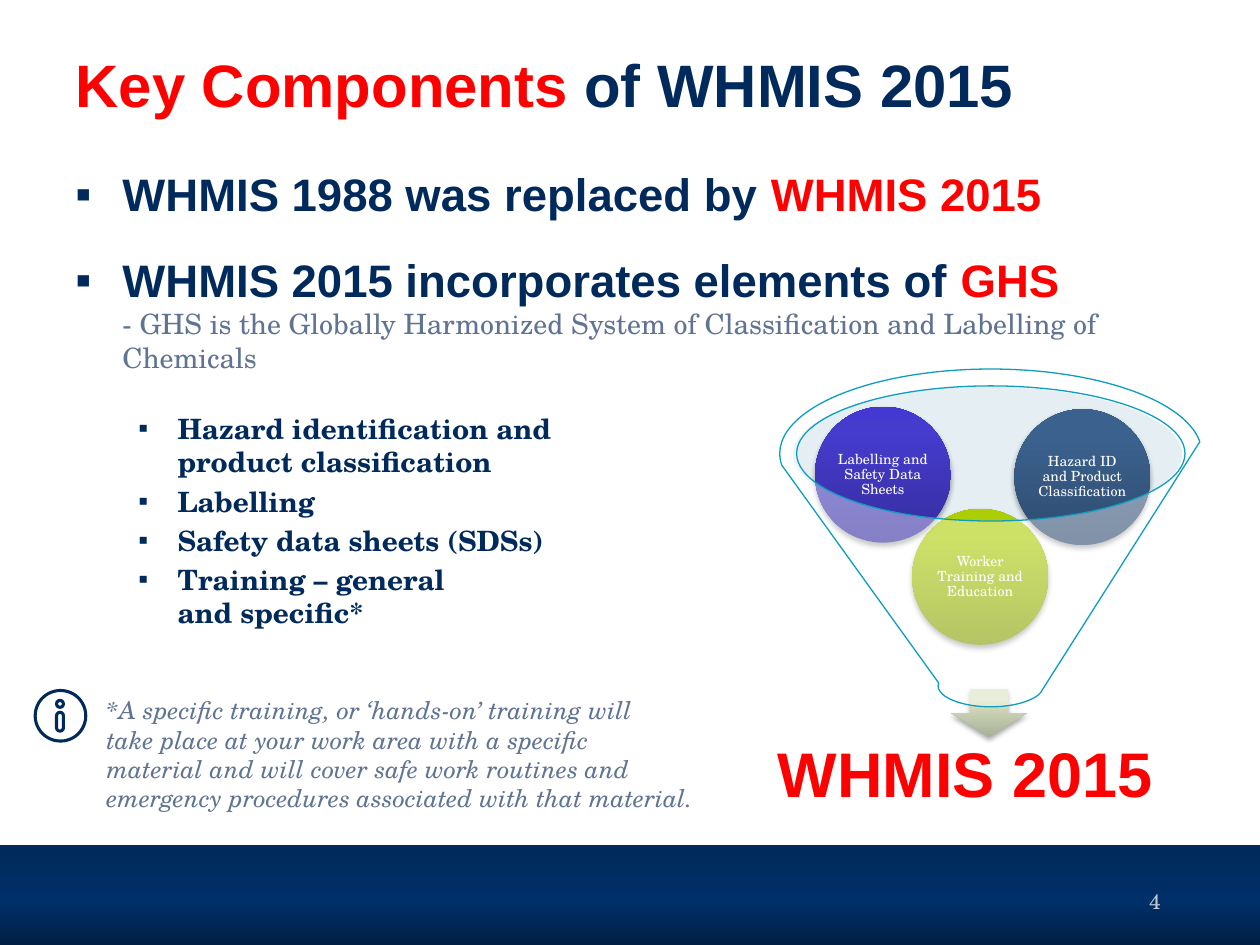
from lxml import etree
from pptx import Presentation
from pptx.dml.color import RGBColor
from pptx.enum import shapes, text
from pptx.oxml.ns import qn
from pptx.util import Cm, Pt

COLORS = {"navy": "002A5C", "red": "FF0000", "slate": "607392", "white": "FFFFFF",
          "pale": "BDD5E2", "teal": "0D9DBF", "page": "C0C9D5"}
SANS, SERIF = "Arial", "TeX Gyre Schola"
TITLE = [("Key Components ", "red"), ("of WHMIS 2015", "navy")]
POINTS = [
    [("WHMIS 1988 was replaced by ", "navy"), ("WHMIS 2015", "red")],
    [("WHMIS 2015 incorporates elements of ", "navy"), ("GHS", "red")],
]
GHS_NOTE = "- GHS is the Globally Harmonized System of Classification and Labelling of Chemicals"
ELEMENTS = ["Hazard identification and\vproduct classification", "Labelling",
            "Safety data sheets (SDSs)", "Training – general\vand specific*"]
FOOTNOTE = ["*A specific training, or ‘hands-on’ training will",
            "take place at your work area with a specific",
            "material and will cover safe work routines and",
            "emergency procedures associated with that material."]
BAND = [(0, "002A5C"), (39, "002E64"), (55, "003069"), (73, "002A5C"), (100, "001E42")]
ARROW = [(0, "A8B096"), (80, "DBE4C2"), (100, "DCE6C3")]
BALL = 2.74
BALLS = [
    (18.39, 10.26, "Worker Training and Education", [(0, "859E01"), (80, "ADCE02"), (100, "AFD000")]),
    (16.43, 8.2, "Labelling and Safety Data Sheets", [(0, "352D9E"), (80, "453BCD"), (100, "4338D1")]),
    (20.45, 8.25, "Hazard ID and Product Classification", [(0, "2E4B6E"), (80, "3B618E"), (100, "3A6191")]),
]
ICON = [("OVAL", 0.71, 13.92, 1.02, 1.02), ("OVAL", 1.14, 14.12, 0.14, 0.14),
        ("ROUNDED_RECTANGLE", 1.14, 14.36, 0.14, 0.38)]

prs = Presentation()
prs.slide_width, prs.slide_height = Cm(25.4), Cm(19.05)
s = prs.slides.add_slide(prs.slide_layouts[5])


def rgb(name):
    return RGBColor.from_string(COLORS[name])


def style(font, size, name, color, bold=False, italic=False):
    font.size, font.name, font.bold, font.italic = Pt(size), name, bold, italic
    font.color.rgb = rgb(color)


def add_runs(p, runs):
    for words, color in runs:
        r = p.add_run()
        r.text = words
        r.font.color.rgb = rgb(color)


def sub(parent, tag, **attrs):
    return etree.SubElement(parent, qn(tag), {k: str(v) for k, v in attrs.items()})


def add_shape(kind, *box):
    sp = s.shapes.add_shape(getattr(shapes.MSO_SHAPE, kind), *map(Cm, box))
    sp.shadow.inherit = False
    sp.fill.background()
    sp.line.fill.background()
    return sp


def gradient(sp, stops, angle):
    sp.fill.gradient()
    sp.fill.gradient_angle = angle
    gs_list = sp._element.spPr.find(".//" + qn("a:gsLst"))
    for gs in list(gs_list):
        gs_list.remove(gs)
    for pos, color in stops:
        sub(sub(gs_list, "a:gs", pos=pos * 1000), "a:srgbClr", val=color)


def tint(sp, color):
    sp.fill.solid()
    sp.fill.fore_color.rgb = rgb(color)
    sub(sp._element.spPr.find(qn("a:solidFill"))[0], "a:alpha", val=40000)


def drop_shadow(sp):
    effects = sp._element.spPr.find(qn("a:effectLst"))
    shadow = sub(effects, "a:outerShdw", blurRad=Pt(3.1), dist=Pt(1.8), dir=5400000, rotWithShape=0)
    sub(sub(shadow, "a:srgbClr", val="000000"), "a:alpha", val=35000)


def add_text(*box, anchor="TOP", wrap=True):
    tf = s.shapes.add_textbox(*map(Cm, box)).text_frame
    tf.word_wrap = wrap
    tf.vertical_anchor = getattr(text.MSO_ANCHOR, anchor)
    return tf


def set_margins(tf, size):
    tf.margin_left = tf.margin_right = tf.margin_top = tf.margin_bottom = Cm(size)


def add_paragraph(tf):
    return tf.add_paragraph() if tf.paragraphs[0].text else tf.paragraphs[0]


def bullet(p, left, hang):
    pPr = p._p.get_or_add_pPr()
    pPr.set("marL", str(Cm(left)))
    pPr.set("indent", str(-Cm(hang)))
    sub(pPr, "a:buFont", typeface="Arial")
    sub(pPr, "a:buChar", char="▪")


gradient(add_shape("RECTANGLE", 0, 17.04, 25.4, 2.01), BAND, 270)

title = s.shapes.title
title.left, title.top, title.width, title.height = map(Cm, (1.27, 0.76, 22.86, 1.85))
tf = title.text_frame
tf.word_wrap = True
tf.vertical_anchor = text.MSO_ANCHOR.MIDDLE
p = tf.paragraphs[0]
p.alignment = text.PP_ALIGN.LEFT
style(p.font, 34.2, SANS, "navy", bold=True)
add_runs(p, TITLE)

tf = add_text(1.27, 3.23, 22.91, 11.76)
for runs in POINTS:
    p = add_paragraph(tf)
    bullet(p, 0.95, 0.95)
    p.space_after = Pt(18)
    style(p.font, 26, SANS, "navy", bold=True)
    add_runs(p, runs)
p.add_line_break()
r = p.add_run()
r.text = GHS_NOTE
style(r.font, 16, SERIF, "slate")
for item in ELEMENTS:
    p = add_paragraph(tf)
    p.text = item
    p.level = 1
    bullet(p, 2.06, 0.79)
    p.space_before = Pt(3.2)
    style(p.font, 16, SERIF, "navy", bold=True)

tint(add_shape("OVAL", 15.98, 7.8, 7.85, 2.72), "pale")
arrow = add_shape("DOWN_ARROW", 19.18, 13.89, 1.52, 0.97)
gradient(arrow, ARROW, 90)
drop_shadow(arrow)

tf = add_text(12.73, 14.3, 13.46, 2.74, anchor="MIDDLE")
set_margins(tf, 0.71)
p = tf.paragraphs[0]
p.text = "WHMIS 2015"
p.alignment, p.line_spacing = text.PP_ALIGN.CENTER, 0.9
style(p.font, 36, SANS, "red", bold=True)

for left, top, label, stops in BALLS:
    ball = add_shape("OVAL", left, top, BALL, BALL)
    gradient(ball, stops, 90)
    drop_shadow(ball)
    tf = ball.text_frame
    tf.word_wrap = True
    set_margins(tf, 0.03)
    p = tf.paragraphs[0]
    p.text = label
    p.alignment, p.line_spacing = text.PP_ALIGN.CENTER, 0.9
    style(p.font, 8, SERIF, "white")

funnel = add_shape("FUNNEL", 15.72, 7.44, 8.51, 6.81)
tint(funnel, "white")
funnel.line.color.rgb = rgb("teal")
funnel.line.width = Pt(0.75)

tf = add_text(17.93, 17.65, 5.72, 1.02, anchor="MIDDLE")
p = tf.paragraphs[0]
p.text = "4"
p.alignment = text.PP_ALIGN.RIGHT
style(p.font, 12, SERIF, "page")

for kind, *box in ICON:
    part = add_shape(kind, *box)
    part.line.color.rgb = rgb("navy")
    part.line.width = Pt(1.75)
    if kind == "ROUNDED_RECTANGLE":
        part.adjustments[0] = 0.5

tf = add_text(1.9, 13.89, 12.4, 3.25, wrap=False)
for line in FOOTNOTE:
    p = add_paragraph(tf)
    p.text = line
    style(p.font, 14, SERIF, "slate", italic=True)

prs.save("out.pptx")
